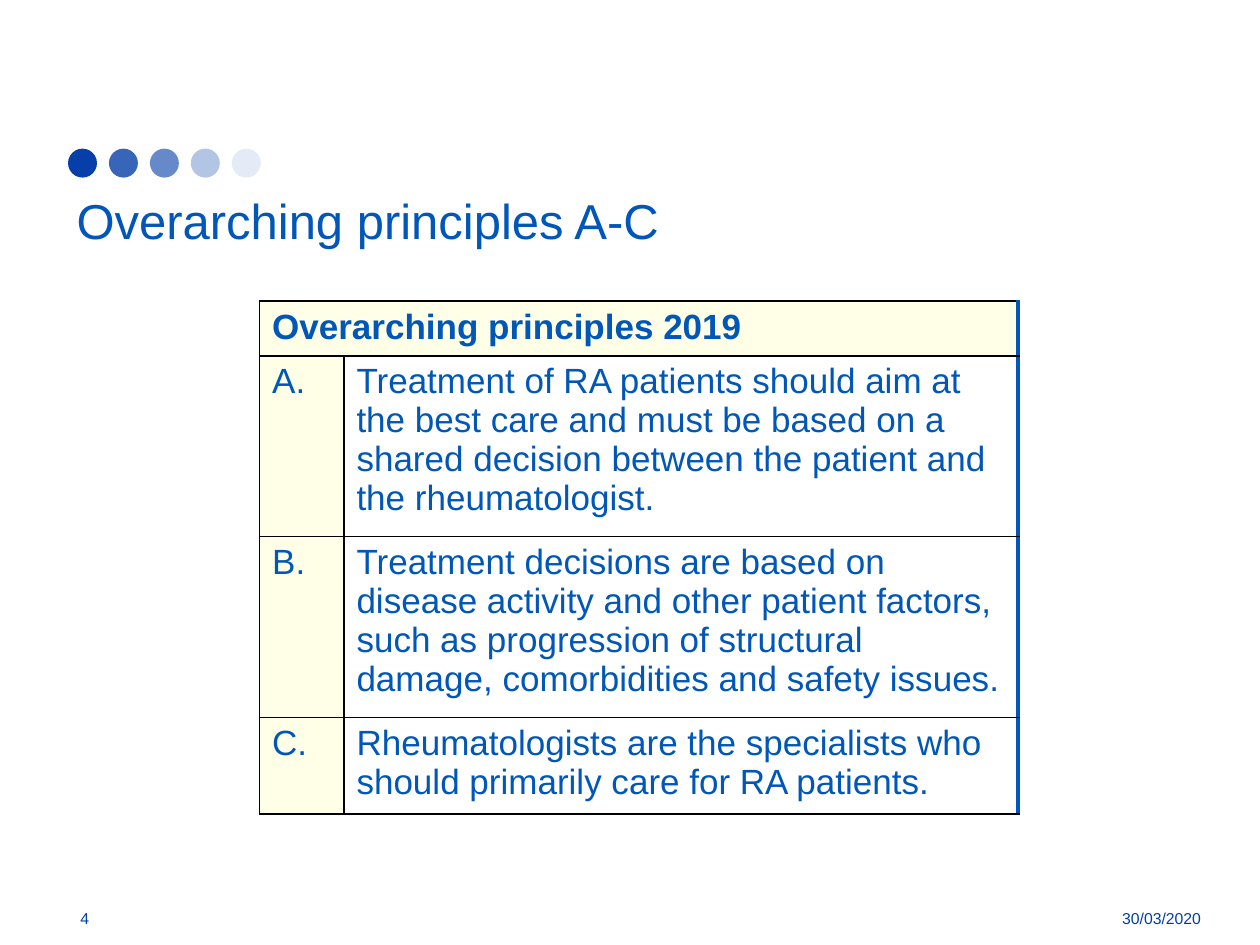
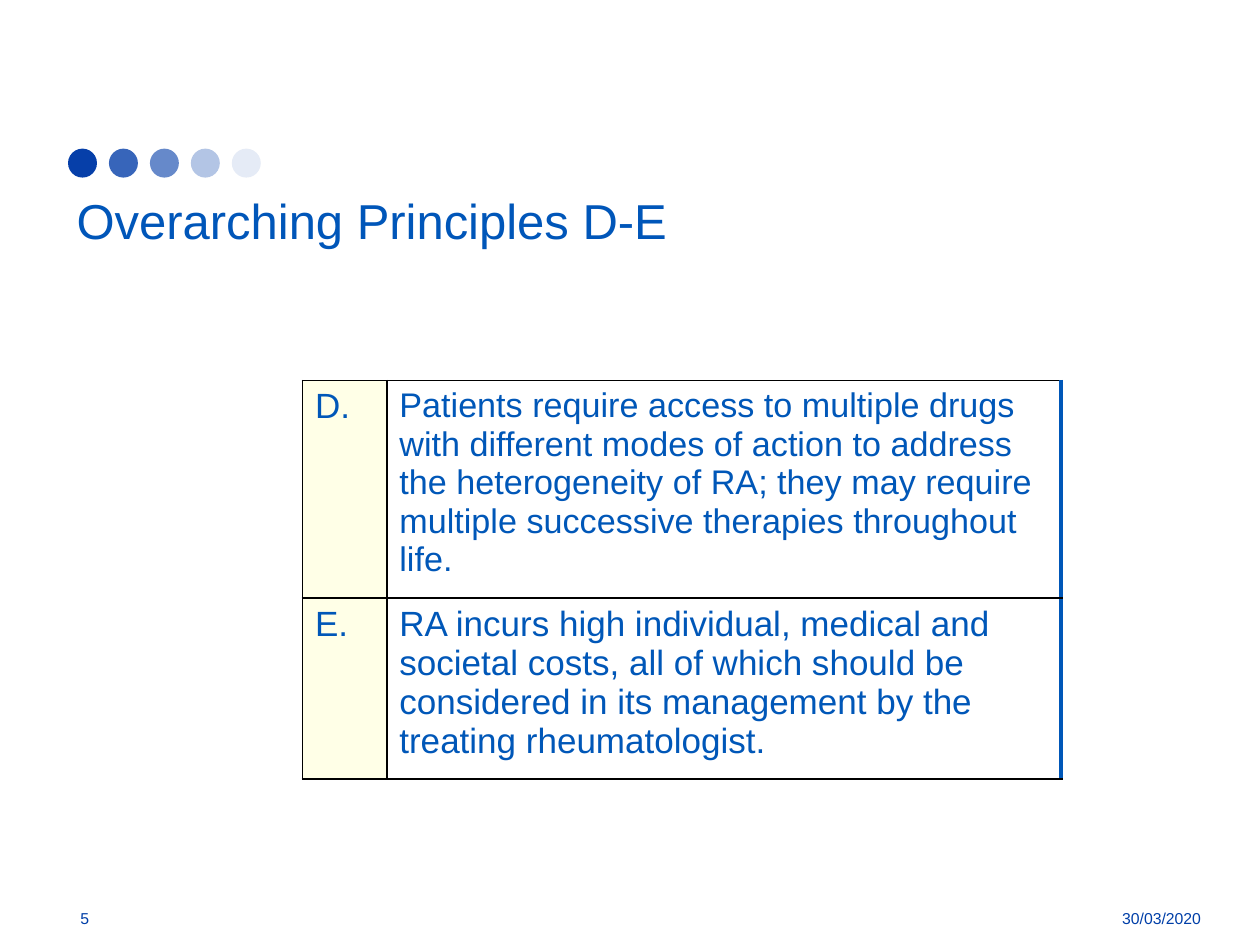
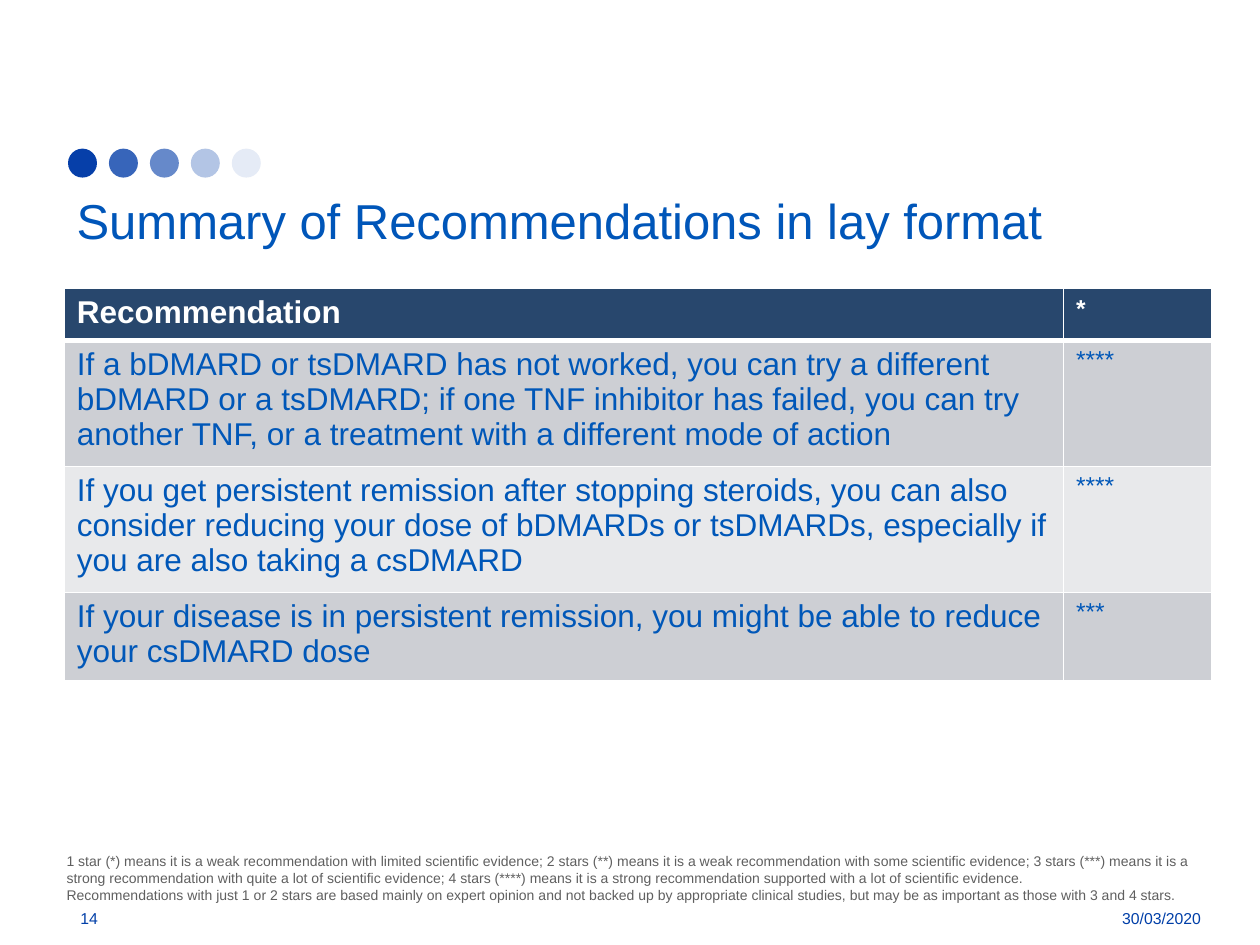
"""Build three slides on treatment principles and recommendations."""
from lxml.etree import SubElement
from pptx import Presentation
from pptx.dml.color import RGBColor
from pptx.enum.shapes import MSO_SHAPE
from pptx.enum.text import MSO_ANCHOR, PP_ALIGN
from pptx.oxml.ns import qn
from pptx.util import Inches, Pt

BLUE, TITLE, FOOTER, DOT = "0057B8", "0056B9", "003FA8", "063FA9"
BLACK, WHITE, CREAM, NAVY = "000000", "FFFFFF", "FFFFE7", "28476D"
GREY, PALE, NOTE = "CDCFD4", "E8E9EB", "5F5F5F"
DATE = "30/03/2020"


def rgb(value):
    """Turn a hex string into a colour."""
    return RGBColor.from_string(value)


class Deck:
    """Hold the style and the current slide."""

    font = "Arial"
    dot_alphas = (100, 80, 61, 30, 10)

    def __init__(self):
        """Start an empty presentation."""
        self.prs = Presentation()
        self.prs.slide_width, self.prs.slide_height = Inches(10), Inches(7.5)

    def slide(self, title, number):
        """Add a slide with its dots, title, number and date."""
        self.s = self.prs.slides.add_slide(self.prs.slide_layouts[6])
        for i, alpha in enumerate(self.dot_alphas):
            self.dot(0.54 + 0.65 * i / 2, alpha)
        self.text(title, (0.51, 1.42, 9.11, 0.69), 28, TITLE, margin_top=Inches(0.09))
        middle = {"vertical_anchor": MSO_ANCHOR.MIDDLE}
        self.text(number, (0.54, 7.09, 0.96, 0.4), 9, FOOTER, **middle)
        self.text(DATE, (8.29, 7.09, 1.34, 0.4), 9, FOOTER, PP_ALIGN.RIGHT, **middle)

    def dot(self, left, alpha):
        """Add one dot of the given opacity in percent."""
        sp = self.s.shapes.add_shape(
            MSO_SHAPE.OVAL, Inches(left), Inches(1.18), Inches(0.23), Inches(0.23))
        sp.shadow.inherit = False
        sp.line.fill.background()
        sp.fill.solid()
        sp.fill.fore_color.rgb = rgb(DOT)
        if alpha < 100:
            colour = sp._element.spPr.find(qn("a:solidFill"))[0]
            SubElement(colour, qn("a:alpha"), val=str(alpha * 1000))

    def put(self, tf, text, size, colour, bold=False, align=PP_ALIGN.LEFT):
        """Set each line of the text as a formatted paragraph."""
        tf.text = text
        values = {"name": self.font, "size": Pt(size), "bold": bold}
        for p in tf.paragraphs:
            p.alignment = align
            for r in p.runs:
                r.font.color.rgb = rgb(colour)
                for name, value in values.items():
                    setattr(r.font, name, value)

    def text(self, text, at, size, colour, align=PP_ALIGN.LEFT, **frame):
        """Add a wrapped text box."""
        tf = self.s.shapes.add_textbox(*map(Inches, at)).text_frame
        for name, value in {"word_wrap": True, **frame}.items():
            setattr(tf, name, value)
        self.put(tf, text, size, colour, align=align)

    def border(self, cell, sides):
        """Draw the four borders of a cell from (colour, width) pairs."""
        tcPr = cell._tc.get_or_add_tcPr()
        for side in "LRTB":
            colour, width = sides[side]
            ln = SubElement(tcPr, qn(f"a:ln{side}"), w=str(Pt(width)))
            SubElement(SubElement(ln, qn("a:solidFill")), qn("a:srgbClr"), val=colour)

    def table(self, left, top, cols, rows, line, right, header_line=None):
        """Add a table from (height, cells) rows of (text, fill, format) cells."""
        heights = [height for height, _ in rows]
        tbl = self.s.shapes.add_table(
            len(rows), len(cols), Inches(left), Inches(top),
            Inches(sum(cols)), Inches(sum(heights))).table
        tbl.first_row = tbl.horz_banding = False
        for col, width in zip(tbl.columns, cols):
            col.width = Inches(width)
        for i, (height, cells) in enumerate(rows):
            tbl.rows[i].height = Inches(height)
            if len(cells) < len(cols):
                tbl.cell(i, 0).merge(tbl.cell(i, len(cols) - 1))
            for j in range(len(cols)):
                cell = tbl.cell(i, j)
                sides = dict.fromkeys("LRTB", line)
                if j == len(cols) - 1 or cell.is_merge_origin:
                    sides["R"] = right
                if header_line and i < 2:
                    sides["BT"[i]] = header_line
                self.border(cell, sides)
                if j >= len(cells):
                    continue
                text, fill, fmt = cells[j]
                self.put(cell.text_frame, text, **fmt)
                if fill:
                    cell.fill.solid()
                    cell.fill.fore_color.rgb = rgb(fill)
                else:
                    cell.fill.background()

    def principles(self, left, top, entries, header=None):
        """Add a table of lettered principles."""
        style = {"size": 20, "colour": BLUE}
        rows = [(0.41, [(header, CREAM, {**style, "bold": True})])] if header else []
        for letter, height, size, text in entries:
            rows.append((height, [(letter, CREAM, style),
                                  (text, None, {**style, "size": size})]))
        self.table(left, top, (0.67, 5.35), rows, (BLACK, 1), (BLUE, 2.25))

    def recommendations(self, left, top, entries):
        """Add a table of recommendations with their stars."""
        rows = []
        for i, (height, text, stars) in enumerate(entries):
            fill = (GREY if i % 2 else PALE) if i else NAVY
            style = {"colour": BLUE if i else WHITE, "bold": i == 0}
            rows.append((height, [(text, fill, {**style, "size": 18}),
                                  (stars, fill, {**style, "size": 14})]))
        white = (WHITE, 1)
        self.table(left, top, (7.93, 1.18), rows, white, white, (WHITE, 3))


def main():
    """Build and save the slides."""
    deck = Deck()

    deck.slide("Overarching principles A-C", "4")
    deck.principles(2.06, 2.39, [
        ("A.", 1.34, 20, "Treatment of RA patients should aim at the best care and must be "
         "based on a shared decision between the patient and the rheumatologist."),
        ("B.", 1.34, 20, "Treatment decisions are based on disease activity and other patient "
         "factors, such as progression of structural damage, comorbidities and safety issues."),
        ("C.", 0.72, 20, "Rheumatologists are the specialists who should primarily care for "
         "RA patients."),
    ], "Overarching principles 2019")

    deck.slide("Overarching Principles D-E", "5")
    deck.principles(2.4, 3.02, [
        ("D.", 1.63, 19.5, "Patients require access to multiple drugs with different modes of "
         "action to address the heterogeneity of RA; they may require multiple successive "
         "therapies throughout life."),
        ("E.", 1.34, 20, "RA incurs high individual, medical and societal costs, all of which "
         "should be considered in its management by the treating rheumatologist."),
    ])

    deck.slide("Summary of Recommendations in lay format", "14")
    deck.recommendations(0.51, 2.29, [
        (0.41, "Recommendation", "*"),
        (0.94, "If a bDMARD or tsDMARD has not worked, you can try a different bDMARD or a "
         "tsDMARD; if one TNF inhibitor has failed, you can try another TNF, or a treatment "
         "with a different mode of action", "****"),
        (0.94, "If you get persistent remission after stopping steroids, you can also consider "
         "reducing your dose of bDMARDs or tsDMARDs, especially if you are also taking a "
         "csDMARD", "****"),
        (0.66, "If your disease is in persistent remission, you might be able to reduce your "
         "csDMARD dose", "***"),
    ])
    deck.text(
        "1 star (*) means it is a weak recommendation with limited scientific evidence; "
        "2 stars (**) means it is a weak recommendation with some scientific evidence; "
        "3 stars (***) means it is a strong recommendation with quite a lot of scientific "
        "evidence; 4 stars (****) means it is a strong recommendation supported with a lot "
        "of scientific evidence.\n"
        "Recommendations with just 1 or 2 stars are based mainly on expert opinion and not "
        "backed up by appropriate clinical studies, but may be as important as those with "
        "3 and 4 stars.", (0.43, 6.72, 9.14, 0.5), 8, NOTE)

    deck.prs.save("out.pptx")


if __name__ == "__main__":
    main()
